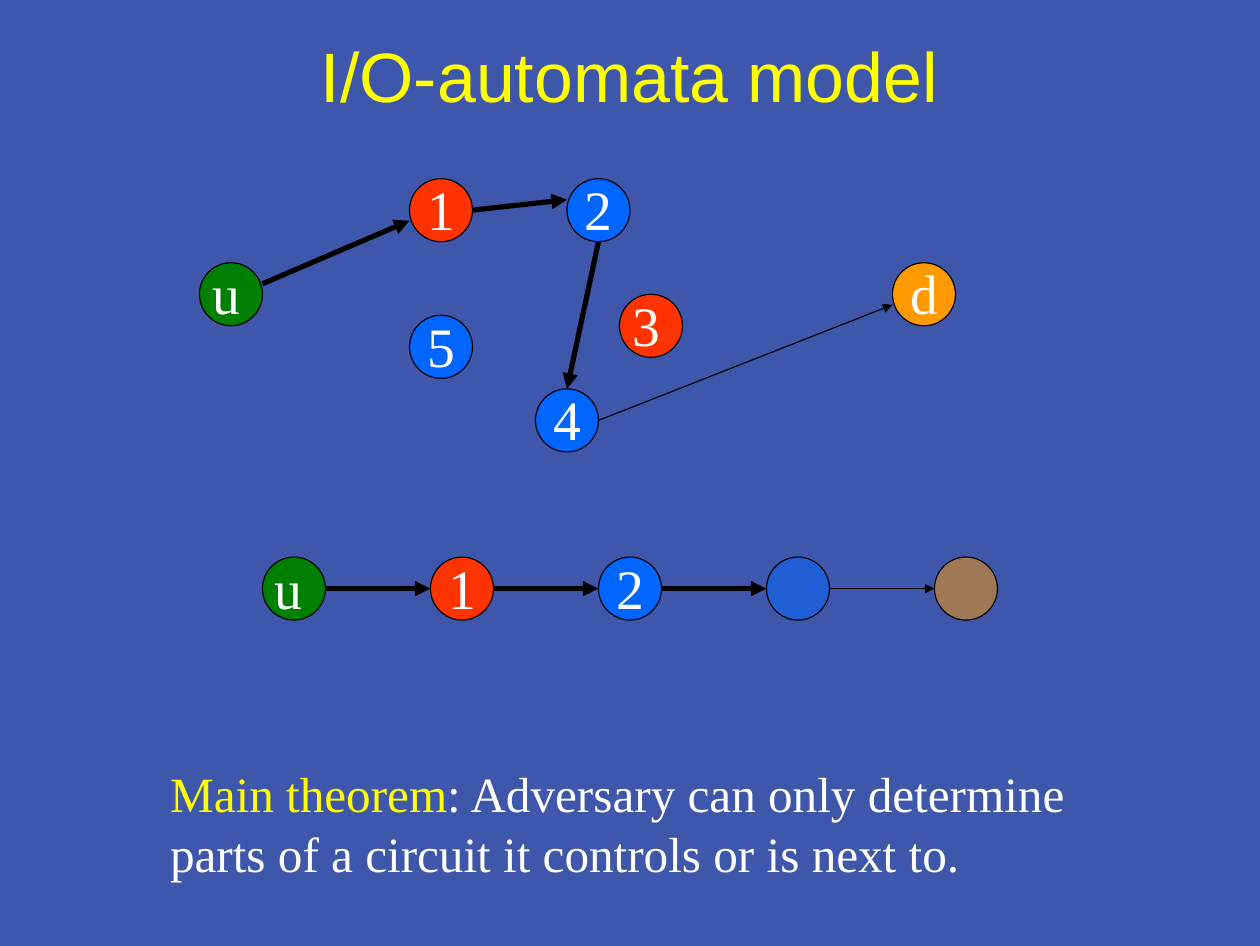
from pptx import Presentation
from pptx.dml.color import RGBColor
from pptx.enum.shapes import MSO_CONNECTOR, MSO_SHAPE
from pptx.enum.text import MSO_ANCHOR, MSO_AUTO_SIZE, PP_ALIGN
from pptx.oxml.ns import qn
from pptx.util import Inches, Pt
from lxml.etree import SubElement

COLS, ROWS = 120, 90
NODE = 6
RED, BLUE, ORANGE, GREEN = "FF3300", "0066FF", "FF9900", "008000"
BLACK, WHITE, YELLOW = "000000", "FFFFFF", "FFFF00"
THICK, THIN = 3.25, 0.75


def color(value):
    return RGBColor.from_string(value)


def apply(target, values):
    for name, value in values.items():
        setattr(target, name, value)


class Board:
    serif = "Times New Roman"
    sans = "Arial"
    insets = dict(margin_left=Inches(0.11), margin_right=Inches(0.11),
                  margin_top=Inches(0.06), margin_bottom=Inches(0.06))

    def __init__(self, prs, background):
        self.col = prs.slide_width / COLS
        self.row = prs.slide_height / ROWS
        self.s = prs.slides.add_slide(prs.slide_layouts[5])
        fill = self.s.background.fill
        fill.solid()
        fill.fore_color.rgb = color(background)

    def box(self, x, y, w, h):
        return (round(x * self.col), round(y * self.row),
                round(w * self.col), round(h * self.row))

    def add_run(self, p, text, font, size, ink):
        r = p.add_run()
        r.text = text
        apply(r.font, dict(name=font, size=Pt(size)))
        r.font.color.rgb = color(ink)

    def title(self, text, *area):
        sp = self.s.shapes.title
        apply(sp, dict(zip(("left", "top", "width", "height"), self.box(*area))))
        tf = sp.text_frame
        apply(tf, dict(dict.fromkeys(self.insets, 0), word_wrap=True,
                       vertical_anchor=MSO_ANCHOR.MIDDLE))
        p = tf.paragraphs[0]
        apply(p, dict(alignment=PP_ALIGN.CENTER, line_spacing=0.95))
        self.add_run(p, text, self.sans, 44, YELLOW)

    def text(self, area, runs, size, align=PP_ALIGN.LEFT):
        tf = self.s.shapes.add_textbox(*self.box(*area)).text_frame
        apply(tf, dict(self.insets, word_wrap=True,
                       auto_size=MSO_AUTO_SIZE.SHAPE_TO_FIT_TEXT))
        p = tf.paragraphs[0]
        p.alignment = align
        for text, ink in runs:
            self.add_run(p, text, self.serif, size, ink)

    def node(self, label, x, y, paint, alpha=100, label_width=NODE):
        sp = self.s.shapes.add_shape(MSO_SHAPE.OVAL, *self.box(x, y, NODE, NODE))
        sp.shadow.inherit = False
        sp.fill.solid()
        sp.fill.fore_color.rgb = color(paint)
        sp.line.color.rgb = color(BLACK)
        sp.line.width = Pt(THIN)
        if alpha < 100:
            clr = next(sp._element.spPr.iter(qn("a:srgbClr")))
            SubElement(clr, qn("a:alpha"), val=str(alpha * 1000))
        if label:
            align = PP_ALIGN.LEFT if label == "u" else PP_ALIGN.CENTER
            self.text((x, y - 1, label_width, 7.6), [(label, WHITE)], 35, align)

    def arrow(self, start, end, width=THICK):
        x1, y1, x2, y2 = self.box(*start, *end)
        c = self.s.shapes.add_connector(MSO_CONNECTOR.STRAIGHT, x1, y1, x2, y2)
        c.line.color.rgb = color(BLACK)
        c.line.width = Pt(width)
        ln = next(c._element.spPr.iter(qn("a:ln")))
        SubElement(ln, qn("a:tailEnd"), type="triangle")
        SubElement(c._element.spPr, qn("a:effectLst"))


def main():
    prs = Presentation()
    apply(prs, dict(slide_width=Inches(11.02), slide_height=Inches(8.27)))
    board = Board(prs, "3F57AB")
    board.title("I/O-automata model", 9, 0, 102, 15)

    for label, x, y, paint in (("1", 39, 17, RED), ("2", 54, 17, BLUE),
                               ("5", 39, 30, BLUE), ("4", 51, 37, BLUE),
                               ("d", 85, 25, ORANGE), ("u", 19, 25, GREEN)):
        board.node(label, x, y, paint)
    board.node("3", 59, 28, RED, label_width=5)

    for start, end, width in (((25, 27), (39, 21), THICK),
                              ((45, 20), (54, 19), THICK),
                              ((57, 23), (54, 37), THICK),
                              ((57, 40), (85, 29), THIN)):
        board.arrow(start, end, width)

    circuit = (("u", GREEN, 100), ("1", RED, 100), ("2", BLUE, 100),
               ("", BLUE, 50), ("", ORANGE, 50))
    left, top, step = 25, 53, 16
    middle = top + NODE / 2
    for i, (label, paint, alpha) in enumerate(circuit):
        x = left + i * step
        board.node(label, x, top, paint, alpha)
        if i:
            board.arrow((x - step + NODE, middle), (x, middle),
                        THIN if i == len(circuit) - 1 else THICK)

    board.text((15, 72, 88, 12.5),
               [("Main theorem", YELLOW),
                (": Adversary can only determine parts of a circuit "
                 "it controls or is next to.", WHITE)], 31)
    prs.save("out.pptx")


if __name__ == "__main__":
    main()
